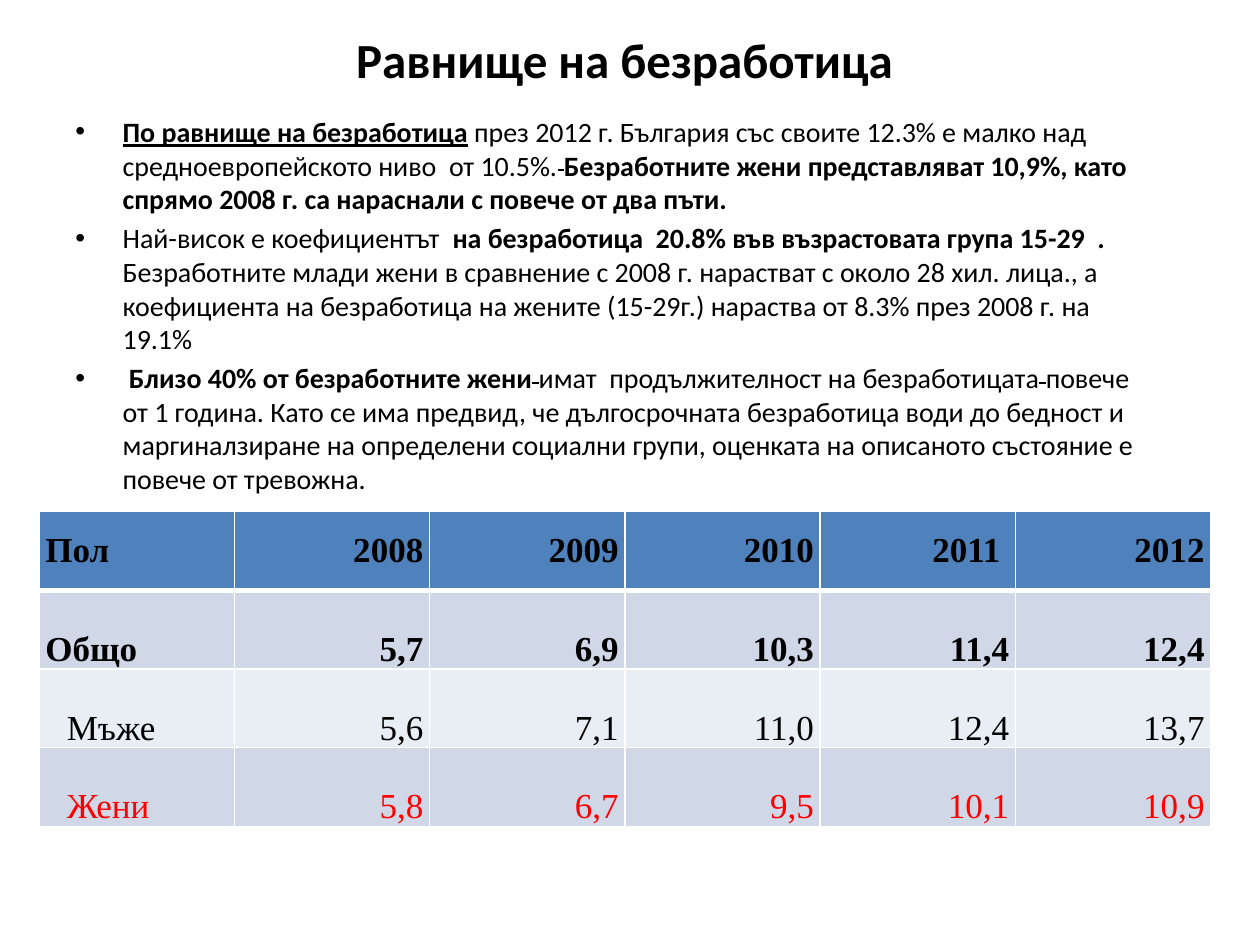
import pptx
import pptx.dml.color
import pptx.enum.text
import pptx.oxml
import pptx.oxml.ns
import pptx.util

COLORS = {
    "text": "000000",
    "women": "FF0000",
    "header": "4F81BD",
    "band_dark": "D0D8E8",
    "band_light": "E9EDF4",
    "border": "FFFFFF",
}
ALIGN = pptx.enum.text.PP_ALIGN
ANCHOR = pptx.enum.text.MSO_ANCHOR

# Each paragraph is a list of (text, style): b bold, u underlined, s struck through.
BULLETS = [
    [
        ("По равнище на безработица", "bu"),
        (" през 2012 г. България със своите 12.3% е малко над средноевропейското ниво  от 10.5%.", ""),
        (" ", "s"),
        ("Безработните жени представляват 10,9%, като спрямо 2008 г. са нараснали с повече от два пъти.", "b"),
    ],
    [
        ("Най-висок е коефициентът  ", ""),
        ("на безработица  20.8% във възрастовата група 15-29  .  ", "b"),
        ("Безработните млади жени в сравнение с 2008 г. нарастват с около 28 хил. лица., "
         "а коефициента на безработица на жените (15-29г.) нараства от 8.3% през 2008 г. на 19.1%", ""),
    ],
    [
        (" ", ""),
        ("Близо 40% от безработните жени", "b"),
        (" ", "s"),
        ("имат  продължителност на безработицата", ""),
        (" ", "s"),
        ("повече от 1 година. Като се има предвид, че дългосрочната безработица води до бедност и "
         "маргиналзиране на определени социални групи, оценката на описаното състояние е "
         "повече от тревожна.", ""),
    ],
]

# Values, fill, text colour, bold
TABLE_ROWS = [
    (["Пол", "2008", "2009", "2010", "2011 ", "2012"], "header", "text", True),
    (["Общо", "5,7", "6,9", "10,3", "11,4", "12,4"], "band_dark", "text", True),
    (["Мъже", "5,6", "7,1", "11,0", "12,4", "13,7"], "band_light", "text", False),
    (["Жени", "5,8", "6,7", "9,5", "10,1", "10,9"], "band_dark", "women", False),
]

presentation = pptx.Presentation()
presentation.slide_width = pptx.util.Inches(10)
presentation.slide_height = pptx.util.Inches(7.5)
slide = presentation.slides.add_slide(presentation.slide_layouts[6])
UNIT = presentation.slide_width / 100


def grid(*counts):
    """Turn counts of grid units (1/100 of the slide's width) into lengths."""
    return [pptx.util.Emu(round(count * UNIT)) for count in counts]


def style_font(font, name, size, color, bold):
    font.name = name
    font.size = pptx.util.Pt(size)
    font.bold = bold
    font.color.rgb = pptx.dml.color.RGBColor.from_string(COLORS[color])


# Title
title_frame = slide.shapes.add_textbox(*grid(5, 0, 90, 9.4)).text_frame
title_frame.word_wrap = True
title_frame.vertical_anchor = ANCHOR.MIDDLE
title_frame.text = "Равнище на безработица "
title = title_frame.paragraphs[0]
title.alignment = ALIGN.CENTER
style_font(title.runs[0].font, "Calibri", 28, "text", True)

# Bulleted text
body_frame = slide.shapes.add_textbox(*grid(5, 8.6, 87.2, 30.5)).text_frame
body_frame.word_wrap = True
hanging = grid(3.75)[0]
for index, pieces in enumerate(BULLETS):
    paragraph = body_frame.add_paragraph() if index else body_frame.paragraphs[0]
    paragraph.space_before = pptx.util.Pt(3.2)
    properties = paragraph._p.get_or_add_pPr()
    properties.set("marL", str(hanging))
    properties.set("indent", str(-hanging))
    for tag, attribute, value in (("buFont", "typeface", "Arial"), ("buChar", "char", "•")):
        bullet = pptx.oxml.parse_xml(f'<a:{tag} {pptx.oxml.ns.nsdecls("a")} {attribute}="{value}"/>')
        properties.append(bullet)
    for text, style in pieces:
        run = paragraph.add_run()
        run.text = text
        style_font(run.font, "Calibri", 16, "text", "b" in style)
        run.font.underline = "u" in style
        if "s" in style:
            run._r.get_or_add_rPr().set("strike", "sngStrike")

# Unemployment rate by sex and year
column_count = len(TABLE_ROWS[0][0])
table = slide.shapes.add_table(len(TABLE_ROWS), column_count, *grid(3.1, 40.6, 93, 25)).table
side_margin, first_indent = grid(0.5, 1.7)
for row_index, (values, fill, color, bold) in enumerate(TABLE_ROWS):
    for column_index, value in enumerate(values):
        cell = table.cell(row_index, column_index)
        cell.margin_left = cell.margin_right = side_margin
        cell.margin_top = cell.margin_bottom = 0
        cell.vertical_anchor = ANCHOR.BOTTOM if row_index else ANCHOR.MIDDLE
        cell.fill.solid()
        cell.fill.fore_color.rgb = pptx.dml.color.RGBColor.from_string(COLORS[fill])
        cell.text_frame.text = value
        paragraph = cell.text_frame.paragraphs[0]
        paragraph.alignment = ALIGN.RIGHT if column_index else ALIGN.LEFT
        if column_index == 0 and not bold:
            paragraph._p.get_or_add_pPr().set("indent", str(first_indent))
        style_font(paragraph.runs[0].font, "Times New Roman", 20, color, bold)

        # A thick line parts the header from the data
        widths = {"L": 1, "R": 1, "T": 3 if row_index == 1 else 1, "B": 1 if row_index else 3}
        for position, (side, width) in enumerate(widths.items()):
            border = pptx.oxml.parse_xml(
                f'<a:ln{side} {pptx.oxml.ns.nsdecls("a")} w="{pptx.util.Pt(width)}"><a:solidFill>'
                f'<a:srgbClr val="{COLORS["border"]}"/></a:solidFill></a:ln{side}>'
            )
            cell._tc.get_or_add_tcPr().insert(position, border)

presentation.save("out.pptx")
